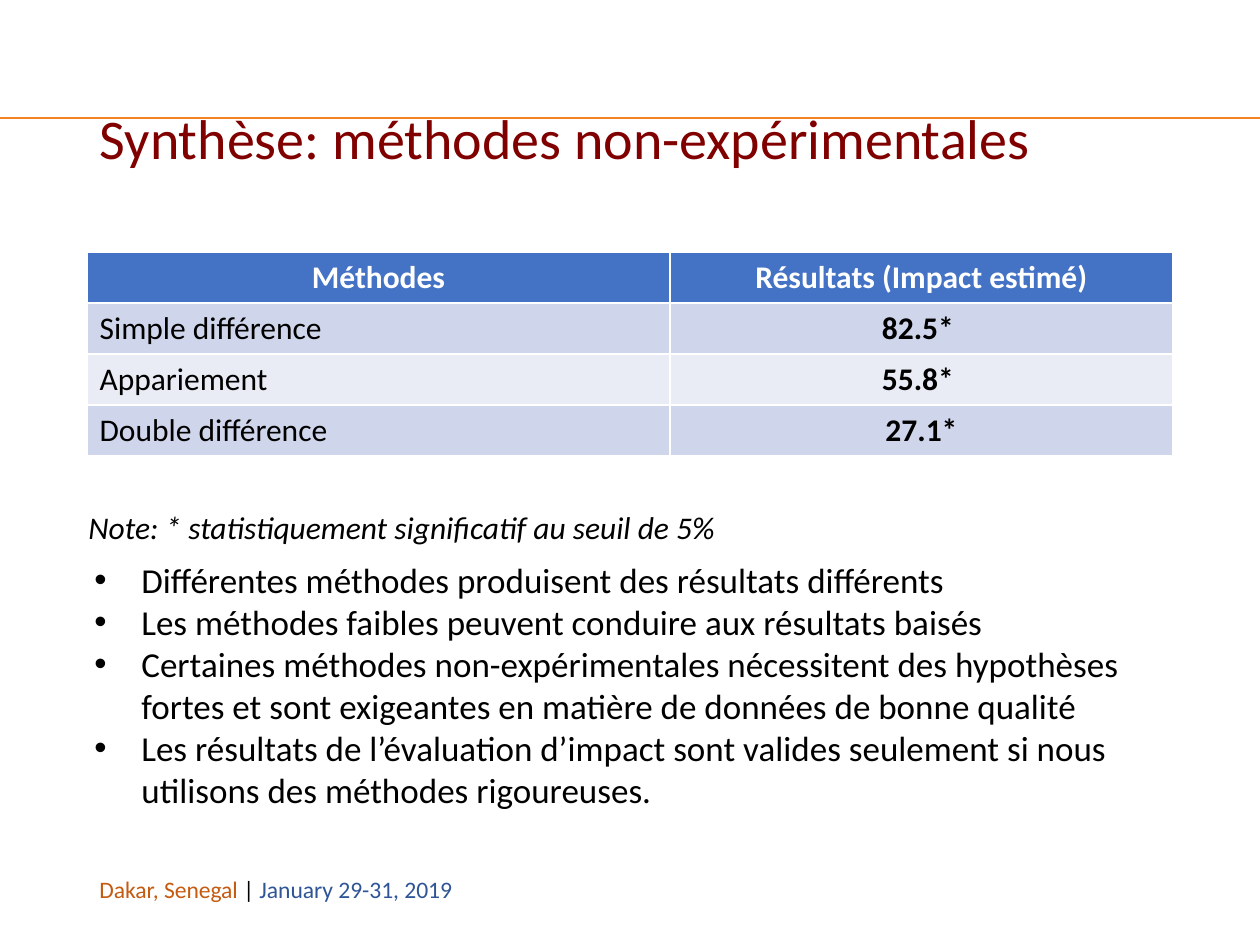
from dataclasses import dataclass

import lxml.etree
import pptx
import pptx.dml.color
import pptx.enum.shapes
import pptx.enum.text
import pptx.oxml.ns
import pptx.util

EMU_PER_PX = 914400 / 126
ALIGN = pptx.enum.text.PP_ALIGN
ANCHOR = pptx.enum.text.MSO_ANCHOR


@dataclass(frozen=True)
class Theme:
    font: str = "Calibri"
    title: str = "800000"
    text: str = "000000"
    white: str = "FFFFFF"
    rule: str = "F58220"
    place: str = "C55A11"
    date: str = "2F5597"
    header: str = "4472C4"
    bands: tuple = ("CFD5EA", "E9EBF5")
    title_size: float = 32
    bullet_size: float = 20
    body_size: float = 18
    footer_size: float = 13.5


THEME = Theme()

RESULTS = [
    ("Méthodes", "Résultats (Impact estimé)"),
    ("Simple différence", "82.5* "),
    ("Appariement", "55.8* "),
    ("Double différence", "27.1*"),
]
CONCLUSIONS = [
    "Différentes méthodes produisent des résultats différents",
    "Les méthodes faibles peuvent conduire aux résultats baisés",
    "Certaines méthodes non-expérimentales nécessitent des hypothèses fortes "
    "et sont exigeantes en matière de données de bonne qualité",
    "Les résultats de l’évaluation d’impact sont valides seulement si nous "
    "utilisons des méthodes rigoureuses.",
]
FOOTER = [
    ("Dakar, Senegal ", THEME.place),
    ("| ", THEME.text),
    ("January 29-31, 2019", THEME.date),
]


def px(length):
    return pptx.util.Emu(round(length * EMU_PER_PX))


def rgb(value):
    return pptx.dml.color.RGBColor.from_string(value)


def format_runs(paragraph, size, color, bold=False, italic=False):
    for run in paragraph.runs:
        run.font.name = THEME.font
        run.font.size = pptx.util.Pt(size)
        run.font.color.rgb = rgb(color)
        run.font.bold = bold
        run.font.italic = italic


def add_title(slide, text, left, top, width, height):
    title = slide.shapes.title
    title.left, title.top, title.width, title.height = map(px, (left, top, width, height))
    frame = title.text_frame
    frame.text = text
    frame.auto_size = pptx.enum.text.MSO_AUTO_SIZE.NONE
    frame.vertical_anchor = ANCHOR.MIDDLE
    paragraph = frame.paragraphs[0]
    paragraph.alignment = ALIGN.LEFT
    paragraph.line_spacing = 0.9
    format_runs(paragraph, THEME.title_size, THEME.title)


def add_rule(slide, top, width):
    rule = slide.shapes.add_connector(
        pptx.enum.shapes.MSO_CONNECTOR.STRAIGHT, px(width), px(top), 0, px(top))
    rule.line.color.rgb = rgb(THEME.rule)
    rule.line.width = pptx.util.Pt(1.5)
    properties = rule._element.spPr
    lxml.etree.SubElement(properties, pptx.oxml.ns.qn("a:effectLst"))


def add_text_box(slide, left, top, width, height, wrap=True):
    box = slide.shapes.add_textbox(px(left), px(top), px(width), px(height))
    box.text_frame.word_wrap = wrap
    return box.text_frame


def add_note(slide, text, left, top, width, height):
    frame = add_text_box(slide, left, top, width, height)
    frame.text = text
    format_runs(frame.paragraphs[0], THEME.body_size, THEME.text, italic=True)


def add_footer(slide, parts, left, top, width, height):
    paragraph = add_text_box(slide, left, top, width, height, wrap=False).paragraphs[0]
    for text, _ in parts:
        paragraph.add_run().text = text
    format_runs(paragraph, THEME.footer_size, THEME.text)
    for run, (_, color) in zip(paragraph.runs, parts):
        run.font.color.rgb = rgb(color)


def add_bullets(slide, items, left, top, width, height, indent):
    frame = add_text_box(slide, left, top, width, height)
    frame.text = "\n".join(items)
    for paragraph in frame.paragraphs:
        properties = paragraph._p.get_or_add_pPr()
        properties.set("marL", str(px(indent)))
        properties.set("indent", str(-px(indent)))
        bullet_font = lxml.etree.SubElement(properties, pptx.oxml.ns.qn("a:buFont"))
        bullet_font.set("typeface", "Arial")
        bullet = lxml.etree.SubElement(properties, pptx.oxml.ns.qn("a:buChar"))
        bullet.set("char", "•")
        format_runs(paragraph, THEME.bullet_size, THEME.text)


def add_results_table(slide, rows, left, top, column_widths, row_height):
    table = slide.shapes.add_table(
        len(rows), len(column_widths), px(left), px(top),
        px(sum(column_widths)), px(row_height * len(rows))).table
    for column, width in zip(table.columns, column_widths):
        column.width = px(width)
    for row_index, values in enumerate(rows):
        is_header = row_index == 0
        fill = THEME.header if is_header else THEME.bands[(row_index - 1) % 2]
        color = THEME.white if is_header else THEME.text
        for column_index, value in enumerate(values):
            emphasized = is_header or column_index > 0
            cell = table.cell(row_index, column_index)
            cell.text = value
            cell.fill.solid()
            cell.fill.fore_color.rgb = rgb(fill)
            paragraph = cell.text_frame.paragraphs[0]
            paragraph.alignment = ALIGN.CENTER if emphasized else ALIGN.LEFT
            format_runs(paragraph, THEME.body_size, color, bold=emphasized)


def main():
    presentation = pptx.Presentation()
    presentation.slide_width = px(1260)
    presentation.slide_height = px(945)
    slide = presentation.slides.add_slide(presentation.slide_layouts[5])

    add_rule(slide, 118, 1260)
    add_footer(slide, FOOTER, 87, 869, 387, 71)
    add_title(slide, "Synthèse: méthodes non-expérimentales", 87, 50, 1086, 183)
    add_results_table(slide, RESULTS, 87, 252, (583, 503), 51)
    add_bullets(slide, CONCLUSIONS, 82, 552, 1130, 267, 47)
    add_note(slide, "Note: * statistiquement significatif au seuil de 5%", 76, 502, 853, 50)

    presentation.save("out.pptx")


if __name__ == "__main__":
    main()
